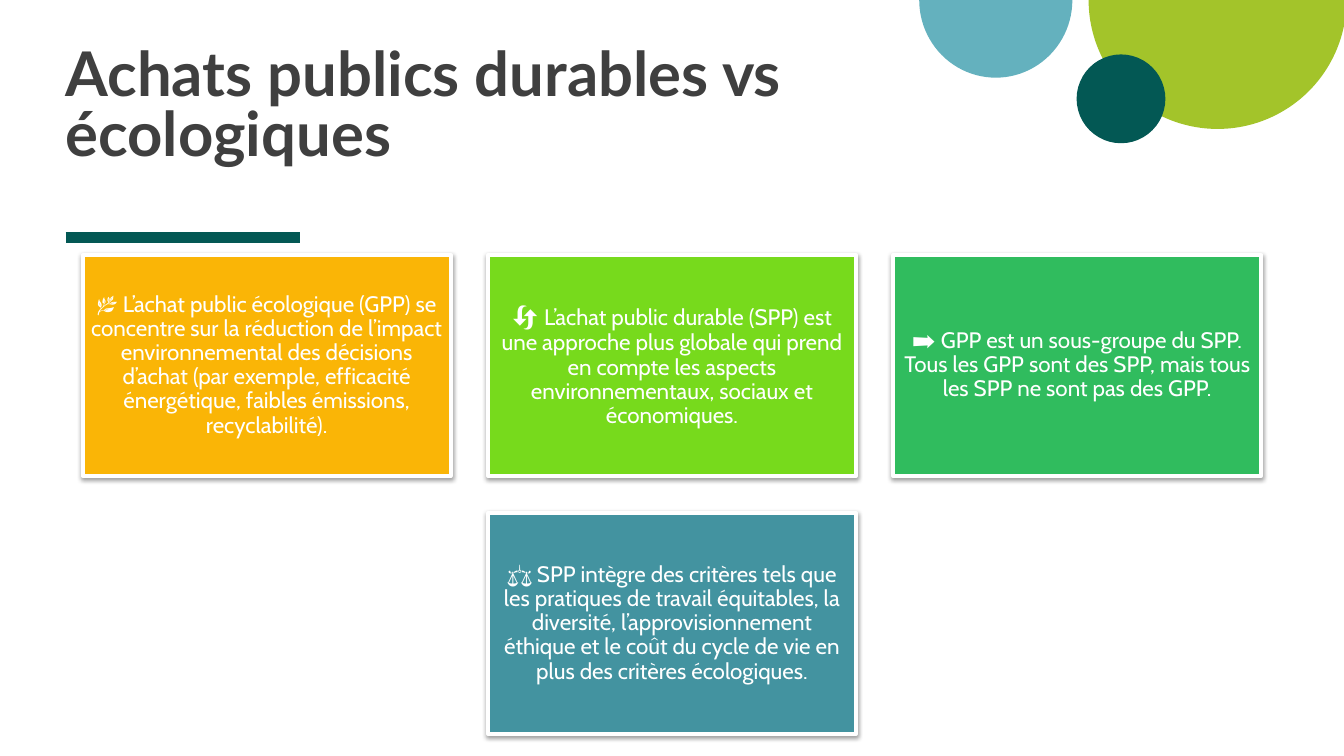
from lxml.etree import SubElement
from pptx import Presentation
from pptx.dml.color import RGBColor
from pptx.enum.shapes import MSO_CONNECTOR, MSO_SHAPE
from pptx.enum.text import MSO_ANCHOR, MSO_AUTO_SIZE, PP_ALIGN
from pptx.oxml.ns import qn
from pptx.util import Pt

WHITE = RGBColor(0xFF, 0xFF, 0xFF)
CHARCOAL = RGBColor(0x3F, 0x3F, 0x3F)
PETROL = RGBColor(0x03, 0x58, 0x54)
LIME = RGBColor(0xA3, 0xC4, 0x2A)
SKY = RGBColor(0x64, 0xB1, 0xBE)
AMBER = RGBColor(0xFA, 0xB5, 0x06)
GREEN = RGBColor(0x77, 0xDA, 0x1C)
EMERALD = RGBColor(0x30, 0xBC, 0x5E)
TEAL = RGBColor(0x43, 0x93, 0xA0)

# Content
TITLE = "Achats publics durables vs écologiques"
# Rows of cards: fill, icon, icon size, text
CARD_ROWS = [
    [
        (AMBER, "🌿 ", 16,
         "L’achat public écologique (GPP) se concentre sur la réduction de "
         "l’impact environnemental des décisions d’achat (par exemple, "
         "efficacité énergétique, faibles émissions, recyclabilité)."),
        (GREEN, "🔄 ", 19,
         "L’achat public durable (SPP) est une approche plus globale qui "
         "prend en compte les aspects environnementaux, sociaux et "
         "économiques."),
        (EMERALD, "➡️ ", 16,
         "GPP est un sous-groupe du SPP. Tous les GPP sont des SPP, mais "
         "tous les SPP ne sont pas des GPP."),
    ],
    [
        (TEAL, "⚖️ ", 16,
         "SPP intègre des critères tels que les pratiques de travail "
         "équitables, la diversité, l’approvisionnement éthique et le coût "
         "du cycle de vie en plus des critères écologiques."),
    ],
]
# Circles: shape, left, top, width, height, fill
CIRCLES = [
    (MSO_SHAPE.PIE, 777.6, -92.2, 184.3, 184.3, LIME),
    (MSO_SHAPE.PIE, 656.6, -55.4, 109.4, 110.9, SKY),
    (MSO_SHAPE.OVAL, 769, 38.9, 63.4, 63.4, PETROL),
]
HALF_TURN = 108  # 180 degrees as a pie adjustment

# Layout
SLIDE_W, SLIDE_H = 960, 540
MARGIN = 46.8
CARD_W, CARD_H, CARD_GAP = 262.9, 157.7, 26.6
CARDS_TOP = 182.2


def add_card_shadow(card):
    effects = SubElement(card._element.spPr, qn("a:effectLst"))
    shadow = SubElement(effects, qn("a:outerShdw"), blurRad=str(Pt(3.1)),
                        dist=str(Pt(1.6)), dir="5400000", rotWithShape="0")
    black = SubElement(shadow, qn("a:srgbClr"), val="000000")
    SubElement(black, qn("a:alpha"), val="37000")


def add_card(slide, left, top, fill, icon, icon_size, text):
    card = slide.shapes.add_shape(MSO_SHAPE.RECTANGLE, Pt(left), Pt(top),
                                  Pt(CARD_W), Pt(CARD_H))
    card.fill.solid()
    card.fill.fore_color.rgb = fill
    card.line.color.rgb = WHITE
    card.line.width = Pt(3)
    add_card_shadow(card)

    frame = card.text_frame
    frame.word_wrap = True
    frame.vertical_anchor = MSO_ANCHOR.MIDDLE
    frame.margin_left = frame.margin_right = Pt(6)
    frame.margin_top = frame.margin_bottom = Pt(6)
    paragraph = frame.paragraphs[0]
    paragraph.alignment = PP_ALIGN.CENTER
    paragraph.line_spacing = 0.9
    for words, size in ((icon, icon_size), (text, 16)):
        run = paragraph.add_run()
        run.text = words
        run.font.name = "Cabin"
        run.font.size = Pt(size)
        run.font.color.rgb = WHITE


def main():
    deck = Presentation()
    deck.slide_width, deck.slide_height = Pt(SLIDE_W), Pt(SLIDE_H)
    slide = deck.slides.add_slide(deck.slide_layouts[5])

    # Rule under the title
    rule = slide.shapes.add_connector(MSO_CONNECTOR.STRAIGHT, Pt(MARGIN),
                                      Pt(169.4), Pt(214.6), Pt(169.4))
    rule.line.color.rgb = PETROL
    rule.line.width = Pt(8)
    SubElement(rule._element.spPr, qn("a:effectLst"))

    # Corner circles
    for kind, left, top, width, height, fill in CIRCLES:
        circle = slide.shapes.add_shape(kind, Pt(left), Pt(top),
                                        Pt(width), Pt(height))
        if kind == MSO_SHAPE.PIE:
            circle.adjustments[0] = 0
            circle.adjustments[1] = HALF_TURN
        circle.shadow.inherit = False
        circle.fill.solid()
        circle.fill.fore_color.rgb = fill
        circle.line.fill.background()

    # Title
    title = slide.shapes.title
    title.left, title.top = Pt(MARGIN), Pt(15.8)
    title.width, title.height = Pt(668.2), Pt(123.8)
    frame = title.text_frame
    frame.text = TITLE
    frame.word_wrap = True
    frame.auto_size = MSO_AUTO_SIZE.NONE
    frame.vertical_anchor = MSO_ANCHOR.MIDDLE
    frame.margin_left = frame.margin_right = 0
    frame.margin_top = frame.margin_bottom = 0
    heading = frame.paragraphs[0]
    heading.alignment = PP_ALIGN.LEFT
    heading.line_spacing = 0.8
    heading.font.name = "Lato"
    heading.font.size = Pt(44)
    heading.font.bold = True
    heading.font.color.rgb = CHARCOAL

    # Cards, each row centred on the slide
    for row, cards in enumerate(CARD_ROWS):
        row_width = len(cards) * (CARD_W + CARD_GAP) - CARD_GAP
        row_left = (SLIDE_W - row_width) / 2
        top = CARDS_TOP + row * (CARD_H + CARD_GAP)
        for column, card in enumerate(cards):
            left = row_left + column * (CARD_W + CARD_GAP)
            add_card(slide, left, top, *card)

    deck.save("out.pptx")


if __name__ == "__main__":
    main()
